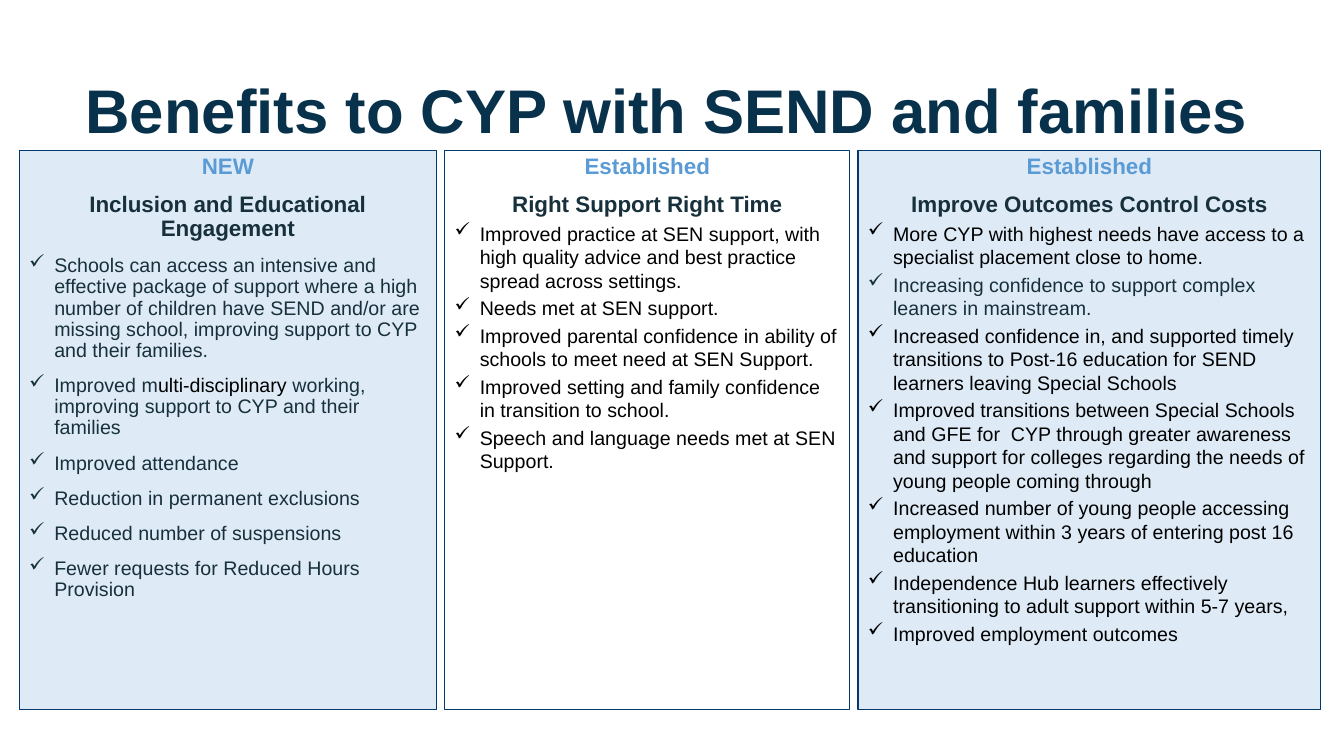
from pptx import Presentation, util as u
from pptx.dml.color import RGBColor
from pptx.enum import shapes, text
from pptx.oxml.ns import qn
from lxml import etree

HEX = {"title": "08314C", "tag": "5B9BD5", "dark": "17303B",
       "black": "000000", "pale": "DEEBF7", "edge": "03396C"}

# Content: each point is a list of (text, colour) runs
TITLE = "Benefits to CYP with SEND and families"
CARDS = [
    {"tag": "NEW", "head": "Inclusion and Educational\nEngagement",
     "left": 19, "width": 414, "fill": "pale", "line": 0.9, "gap": 10,
     "points": [
         [("Schools can access an intensive and effective package of support where a high "
           "number of children have SEND and/or are missing school, improving support to "
           "CYP and their families.", "dark")],
         [("Improved m", "dark"), ("ulti-disciplinary", "black"),
          (" working, improving support to CYP and their families", "dark")],
         [("Improved attendance", "dark")],
         [("Reduction in permanent exclusions", "dark")],
         [("Reduced number of suspensions", "dark")],
         [("Fewer requests for Reduced Hours Provision", "dark")]]},
    {"tag": "Established", "head": "Right Support Right Time",
     "left": 441, "width": 402, "fill": None, "line": 1.0, "gap": 2.8,
     "points": [
         [("Improved practice at SEN support, with high quality advice and best practice "
           "spread across settings.", "black")],
         [("Needs met at SEN support.", "black")],
         [("Improved parental confidence in ability of schools to meet need at SEN "
           "Support.", "black")],
         [("Improved setting and family confidence in transition to school.", "black")],
         [("Speech and language needs met at SEN Support.", "black")]]},
    {"tag": "Established", "head": "Improve Outcomes Control Costs",
     "left": 851, "width": 459, "fill": "pale", "line": 1.0, "gap": 2.8,
     "points": [
         [("More CYP with highest needs have access to a specialist placement close to "
           "home.", "black")],
         [("Increasing confidence to support complex leaners in mainstream.", "dark")],
         [("Increased confidence in, and supported timely transitions to Post-16 education "
           "for SEND learners leaving Special Schools", "black")],
         [("Improved transitions between Special Schools and GFE for  CYP through greater "
           "awareness and support for colleges regarding the needs of young people coming "
           "through", "black")],
         [("Increased number of young people accessing employment within 3 years of "
           "entering post 16 education", "black")],
         [("Independence Hub learners effectively transitioning to adult support within "
           "5-7 years,", "black")],
         [("Improved employment outcomes", "black")]]},
]
TOP, HIGH, INDENT = 149, 555, 25


def px(n):
    return u.Emu(n * 9144)  # 100 px to the inch


def rgb(name):
    return RGBColor.from_string(HEX[name])


def style(font, size, name, bold=False):
    font.name, font.size, font.bold = "Arial", u.Pt(size), bold
    font.color.rgb = rgb(name)


def tick(para):
    props = para._p.get_or_add_pPr()
    props.set("marL", str(px(INDENT)))
    props.set("indent", str(-px(INDENT)))
    etree.SubElement(props, qn("a:buChar")).set("char", "✓")


def heading(para, words, name, gap):
    para.text = words
    para.alignment = text.PP_ALIGN.CENTER
    para.line_spacing, para.space_before = 0.9, u.Pt(gap)
    for run in para.runs:
        style(run.font, 16, name, True)


def point(para, runs, card):
    tick(para)
    para.alignment = text.PP_ALIGN.LEFT
    para.line_spacing, para.space_before = card["line"], u.Pt(card["gap"])
    for words, name in runs:
        run = para.add_run()
        run.text = words
        style(run.font, 14, name)


def draw(slide, card):
    box = slide.shapes.add_shape(shapes.MSO_SHAPE.RECTANGLE, px(card["left"]), px(TOP),
                                 px(card["width"]), px(HIGH))
    box.shadow.inherit = False
    if card["fill"]:
        box.fill.solid()
        box.fill.fore_color.rgb = rgb(card["fill"])
    else:
        box.fill.background()
    box.line.color.rgb = rgb("edge")
    box.line.width = u.Pt(0.75)
    frame = box.text_frame
    frame.word_wrap = True
    frame.vertical_anchor = text.MSO_ANCHOR.TOP
    heading(frame.paragraphs[0], card["tag"], "tag", 0)
    heading(frame.add_paragraph(), card["head"], "dark", 10)
    for runs in card["points"]:
        point(frame.add_paragraph(), runs, card)


def main():
    deck = Presentation()
    deck.slide_width, deck.slide_height = px(1333), px(750)
    slide = deck.slides.add_slide(deck.slide_layouts[6])

    # Title
    frame = slide.shapes.add_textbox(px(75), px(40), px(1220), px(145)).text_frame
    frame.word_wrap = True
    frame.vertical_anchor = text.MSO_ANCHOR.MIDDLE
    frame.text = TITLE
    frame.paragraphs[0].line_spacing = 0.9
    style(frame.paragraphs[0].runs[0].font, 44, "title", True)

    # Three columns
    for card in CARDS:
        draw(slide, card)
    deck.save("out.pptx")


if __name__ == "__main__":
    main()
